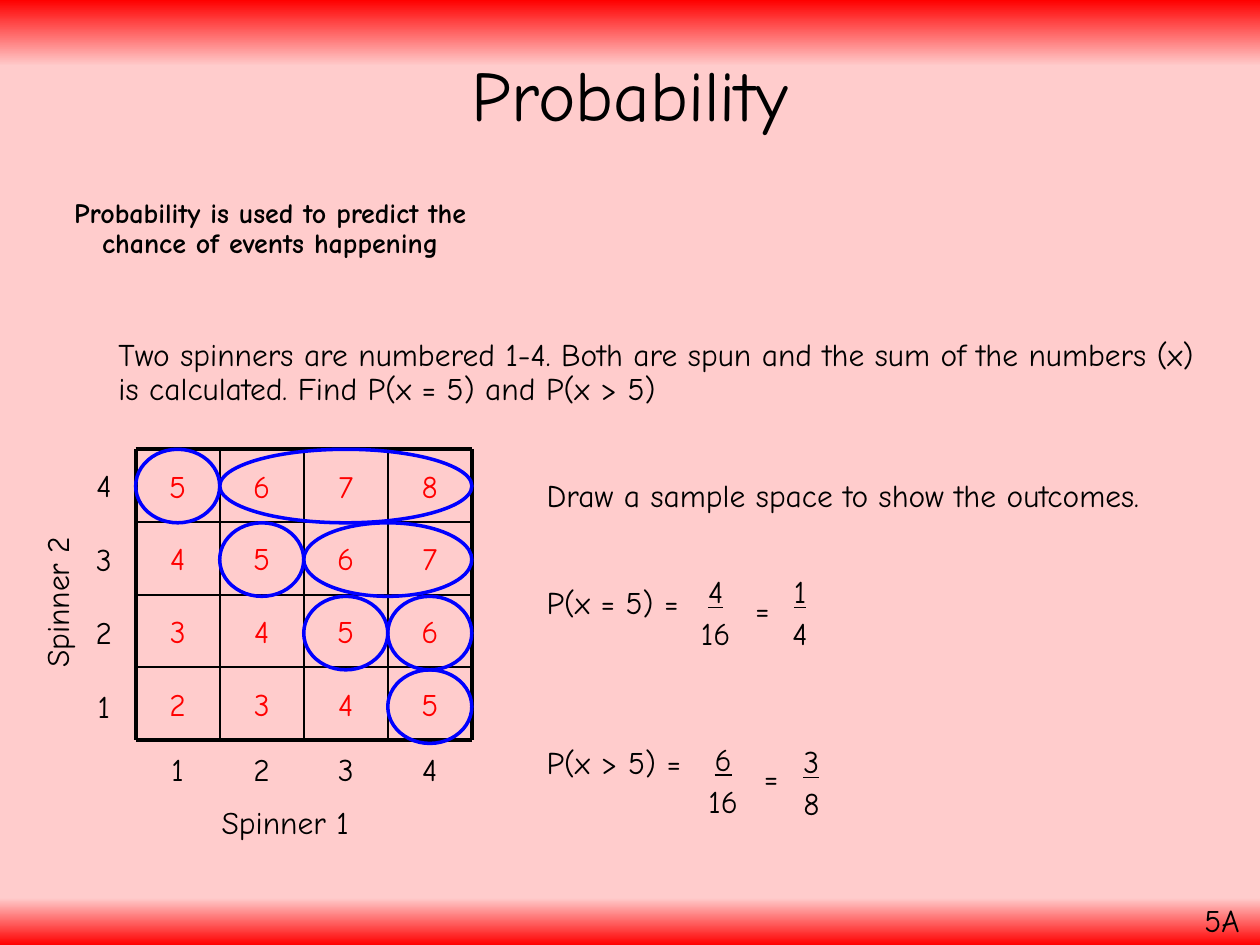
from lxml.etree import SubElement
from pptx import Presentation
from pptx.dml.color import RGBColor
from pptx.enum.shapes import MSO_CONNECTOR, MSO_SHAPE
from pptx.enum.text import MSO_ANCHOR, PP_ALIGN
from pptx.oxml.ns import qn
from pptx.util import Inches, Pt

COLORS = {"ink": "000000", "sum": "FF0000", "ring": "0000FF",
          "edge": "FF0000", "paper": "FFCCCC"}
FONT = "Comic Neue"

prs = Presentation()
prs.slide_width, prs.slide_height = Inches(10), Inches(7.5)
slide = prs.slides.add_slide(prs.slide_layouts[6])


def share(left, top, width, height):
    """Turn percentages of the slide's width and height into lengths."""
    across, down = prs.slide_width / 100, prs.slide_height / 100
    return [round(left * across), round(top * down),
            round(width * across), round(height * down)]


def write(at, *lines, color="ink", frame={}, paragraph={}, font={}):
    """Add a text box; the dicts hold attributes that differ from the usual."""
    box = slide.shapes.add_textbox(*share(*at))
    formats = [(box.text_frame, {"word_wrap": True, **frame})]
    for line, text in enumerate(lines):
        para = box.text_frame.paragraphs[0] if line == 0 else box.text_frame.add_paragraph()
        run = para.add_run()
        run.text = text
        run.font.color.rgb = RGBColor.from_string(COLORS[color])
        formats += [(para, paragraph),
                    (run.font, {"name": FONT, "size": Pt(18), **font})]
    for target, values in formats:
        for name, value in values.items():
            setattr(target, name, value)
    return box


# Background: red edges fading into pink
backdrop = slide.background.fill
backdrop.gradient()
backdrop.gradient_angle = 270
stops = slide.element.find(".//" + qn("a:gsLst"))
for stop in list(stops):
    stops.remove(stop)
for percent, shade in [(0, "edge"), (7, "paper"), (95, "paper"), (100, "edge")]:
    stop = SubElement(stops, qn("a:gs"), pos=str(percent * 1000))
    SubElement(stop, qn("a:srgbClr"), val=COLORS[shade])

# Heading, definition and question
centred = {"alignment": PP_ALIGN.CENTER}
tight = {"line_spacing": 0.9}
middle = {"vertical_anchor": MSO_ANCHOR.MIDDLE}
write((6.9, 3.2, 86.2, 14.5), "Probability", frame=middle,
      paragraph=centred | tight, font={"size": Pt(40.5)})
write((1.6, 20.4, 39.7, 69.6),
      "Probability is used to predict the chance of events happening",
      paragraph=centred | tight, font={"size": Pt(16), "bold": True})
write((94.6, 94.67, 5.4, 5.33), "5A", frame={"word_wrap": False})
write((5.9, 35.2, 90, 64.8),
      "Two spinners are numbered 1-4. Both are spun and the sum of the numbers (x) "
      "is calculated. Find P(x = 5) and P(x > 5)",
      frame={"margin_left": Inches(0.35)}, paragraph=tight)

# Sample space: each cell is the sum of both spinners, spinner 2 counting upwards
SIDES = 4
LEFT, TOP, COL, ROW = 10.77, 47.55, 6.67, 7.69
RING_ROW = 7.78
LABEL_W, LABEL_H = 3.3, 5.33
for row in range(SIDES):
    for col in range(SIDES):
        total = (col + 1) + (SIDES - row)
        write((LEFT + col * COL, TOP + row * ROW, COL, ROW), str(total),
              color="sum", frame=middle, paragraph=centred)

for step in range(SIDES + 1):
    weight = Pt(2.25) if step in (0, SIDES) else Pt(1)
    for left, top, width, height in [(LEFT, TOP + step * ROW, SIDES * COL, 0),
                                     (LEFT + step * COL, TOP, 0, SIDES * ROW)]:
        x, y, w, h = share(left, top, width, height)
        rule = slide.shapes.add_connector(MSO_CONNECTOR.STRAIGHT, x, y, x + w, y + h)
        rule.line.width = weight
        rule.line.color.rgb = RGBColor.from_string(COLORS["ink"])
        SubElement(rule._element.spPr, qn("a:effectLst"))

for step in range(SIDES):
    write((LEFT + (step + 0.5) * COL - LABEL_W / 2, 78.67, LABEL_W, LABEL_H),
          str(step + 1), paragraph=centred)
    write((6.6, 48.67 + step * RING_ROW, LABEL_W, LABEL_H),
          str(SIDES - step), paragraph=centred)
write((16.6, 84.27, 14.2, LABEL_H), "Spinner 1")
write((-2.6, 59.87, 14.2, LABEL_H), "Spinner 2").rotation = 270

# In each row one ring holds the sum 5 and another the greater sums
for row in range(SIDES):
    for col, span in [(row, 1), (row + 1, SIDES - 1 - row)]:
        if span:
            ring = slide.shapes.add_shape(MSO_SHAPE.OVAL, *share(
                LEFT + col * COL, TOP + row * RING_ROW, span * COL, RING_ROW))
            ring.shadow.inherit = False
            ring.fill.background()
            ring.line.width = Pt(2)
            ring.line.color.rgb = RGBColor.from_string(COLORS["ring"])

# Working, spread out so that each probability stands beside its fractions
working = write((42.4, 49.73, 55, 35.47), "Draw a sample space to show the outcomes.",
                "P(x = 5) =", "P(x > 5) =")
for para, gap in zip(working.text_frame.paragraphs, (0, 39.5, 70)):
    para.space_before = Pt(gap)

FRACTION_W, FRACTION_DROP = 5, 4.45
for left, top, numerator, denominator in [
        (54.3, 59.87, "4", "16"), (61, 59.87, "1", "4"),
        (54.9, 77.6, "6", "16"), (61.9, 77.87, "3", "8")]:
    write((left, top, FRACTION_W, LABEL_H), numerator,
          paragraph=centred, font={"underline": True})
    write((left, top + FRACTION_DROP, FRACTION_W, LABEL_H), denominator,
          paragraph=centred)
for left, top in [(58, 61.73), (58.7, 79.6)]:
    write((left, top, FRACTION_W, LABEL_H), "=", paragraph=centred)

prs.save("out.pptx")
